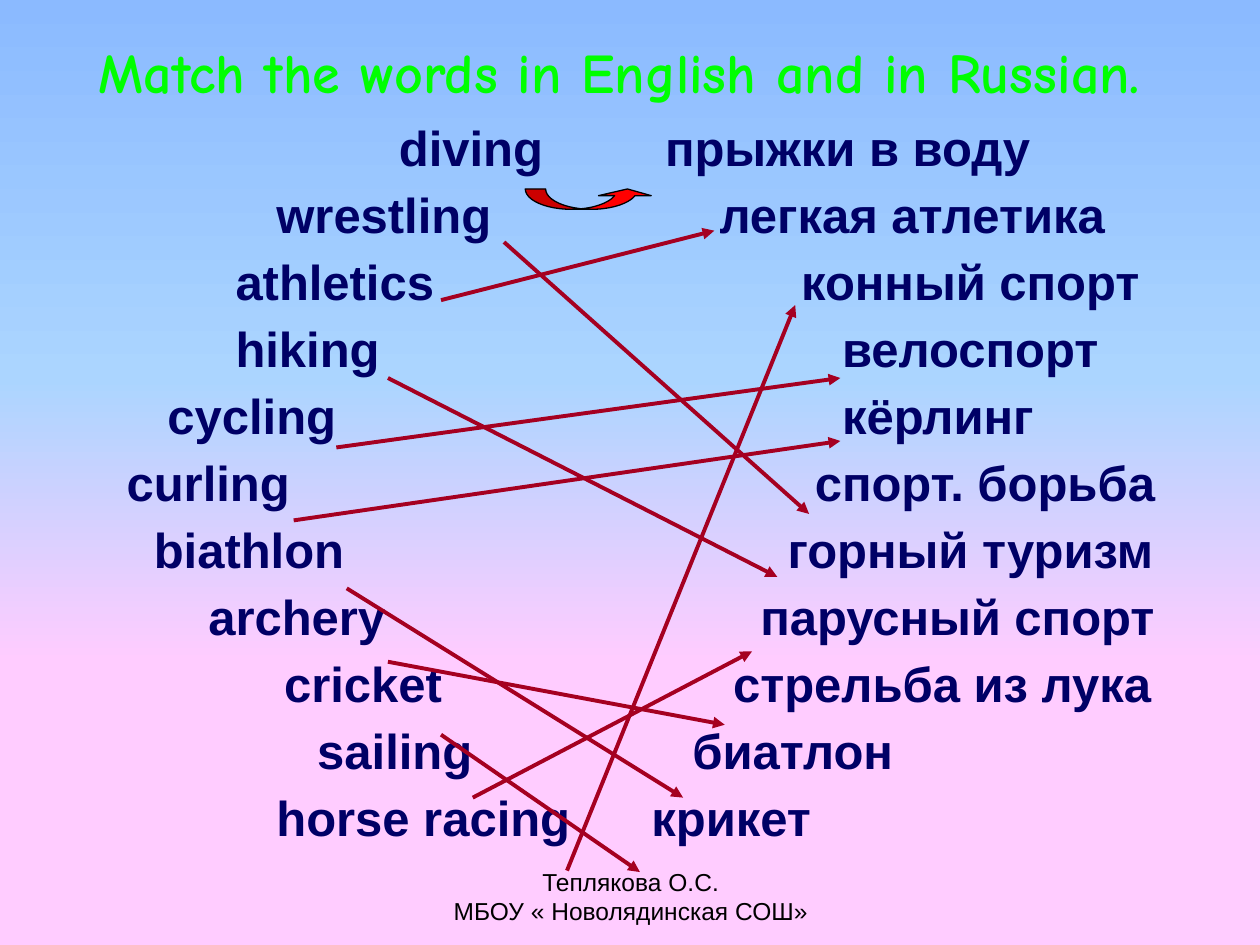
from lxml import etree
from pptx import Presentation
from pptx.dml.color import RGBColor
from pptx.enum import shapes, text
from pptx.oxml import parse_xml
from pptx.oxml.ns import nsdecls, qn
from pptx.util import Cm, Pt

GREEN = RGBColor(0x00, 0xFF, 0x00)
NAVY = RGBColor(0x00, 0x00, 0x66)
CRIMSON = RGBColor(0xA5, 0x00, 0x21)
RED = RGBColor(0xFF, 0x00, 0x00)
BLACK = RGBColor(0x00, 0x00, 0x00)
TITLE_OUTLINE = RGBColor(0x00, 0x20, 0x60)
SKY = [(0, "8BBAFF"), (40, "ABD5FF"), (70, "FFCCFF"), (100, "FFCCFF")]

# Content
TITLE = "Match the words in English and in Russian."
CREDITS = ["Теплякова О.С.", "МБОУ « Новолядинская СОШ»"]
# English word, its indent, Russian word, its indent (in indent steps)
WORDS = [
    ("diving", 23, "прыжки в воду", 4),
    ("wrestling", 14, "легкая атлетика", 8),
    ("athletics", 11, "конный спорт", 14),
    ("hiking", 11, "велоспорт", 17),
    ("cycling", 6, "кёрлинг", 17),
    ("curling", 3, "спорт. борьба", 15),
    ("biathlon", 5, "горный туризм", 13),
    ("archery", 9, "парусный спорт", 11),
    ("cricket", 4, "стрельба из лука", 9),
    ("sailing", 17, "биатлон", 6),
    ("horse racing", 14, "крикет", 3),
]
CENTRED = {"cricket"}
# Start and end of each matching arrow, in cm
MATCHES = [
    ((10.16, 4.88), (16.31, 10.36)),   # wrestling
    ((8.89, 6.05), (14.4, 4.65)),      # athletics
    ((6.78, 9.02), (16.94, 7.62)),     # cycling
    ((5.92, 10.49), (16.94, 8.89)),    # curling
    ((6.99, 11.86), (13.77, 16.08)),   # biathlon
    ((7.82, 13.34), (14.61, 14.61)),   # archery
    ((9.53, 16.08), (15.16, 13.13)),   # sailing
    ((11.43, 17.55), (16.03, 6.15)),   # horse racing
    ((7.82, 7.62), (15.67, 11.63)),    # hiking
    ((8.89, 14.81), (12.9, 17.58)),    # cricket
]

# Layout
INDENT_STEP = 0.27445  # width of one space at 28 pt
CELL_PADDING = 0.25
ROW_HEIGHT = Cm(1.35)
COLUMN_WIDTHS = [Cm(10.58), Cm(12.08)]
NO_STYLE_NO_GRID = "{2D5ABB26-0587-4C30-8999-92F81FD0307C}"

TITLE_FONT = {"name": "Comic Neue", "size": Pt(32), "bold": True}
WORD_FONT = {"name": "Arial", "size": Pt(28), "bold": True}
CREDIT_FONT = {"name": "Arial", "size": Pt(14), "bold": False}


def set_all(target, values):
    for name, value in values.items():
        setattr(target, name, value)


def write(paragraph, content, font, color, alignment):
    run = paragraph.add_run()
    run.text = content
    set_all(run.font, font)
    run.font.color.rgb = color
    paragraph.alignment = alignment
    return run


def paint_background(slide):
    fill = slide.background.fill
    fill.gradient()
    fill.gradient_angle = 270
    stops = slide.element.xpath(".//p:bg//a:gsLst")[0]
    for stop in list(stops):
        stops.remove(stop)
    for percent, color in SKY:
        stops.append(parse_xml(
            f'<a:gs {nsdecls("a")} pos="{percent * 1000}">'
            f'<a:srgbClr val="{color}"/></a:gs>'))


def add_title(slide):
    title = slide.shapes.title
    set_all(title, {"left": Cm(0.43), "top": Cm(0.64),
                    "width": Cm(24.13), "height": Cm(1.57)})
    set_all(title.text_frame, {"vertical_anchor": text.MSO_ANCHOR.MIDDLE,
                               "word_wrap": True,
                               "auto_size": text.MSO_AUTO_SIZE.NONE})
    run = write(title.text_frame.paragraphs[0], TITLE, TITLE_FONT, GREEN,
                text.PP_ALIGN.CENTER)
    run.font._element.insert(0, parse_xml(
        f'<a:ln {nsdecls("a")} w="{Pt(0.75)}"><a:solidFill>'
        f'<a:srgbClr val="{TITLE_OUTLINE}"/></a:solidFill></a:ln>'))


def fill_cell(cell, word, indent):
    cell.fill.background()
    set_all(cell, {"margin_left": Cm(CELL_PADDING + indent * INDENT_STEP),
                   "margin_right": Cm(CELL_PADDING),
                   "margin_top": Cm(0.13), "margin_bottom": Cm(0.06)})
    alignment = (text.PP_ALIGN.CENTER if word in CENTRED
                 else text.PP_ALIGN.LEFT)
    write(cell.text_frame.paragraphs[0], word, WORD_FONT, NAVY, alignment)


def add_word_table(slide):
    table = slide.shapes.add_table(
        len(WORDS), 2, Cm(1.48), Cm(2.34), sum(COLUMN_WIDTHS),
        ROW_HEIGHT * len(WORDS)).table
    set_all(table, {"first_row": False, "horz_banding": False})
    table._tbl.tblPr.find(qn("a:tableStyleId")).text = NO_STYLE_NO_GRID
    for column, width in zip(table.columns, COLUMN_WIDTHS):
        column.width = width
    for row, (english, left_indent, russian, right_indent) in zip(
            table.rows, WORDS):
        row.height = ROW_HEIGHT
        fill_cell(row.cells[0], english, left_indent)
        fill_cell(row.cells[1], russian, right_indent)


def add_example_arrow(slide):
    arrow = slide.shapes.add_shape(
        shapes.MSO_SHAPE.CURVED_UP_ARROW,
        Cm(10.59), Cm(3.81), Cm(2.59), Cm(0.41))
    for index, value in enumerate([1.3, 2.59, 0.33]):
        arrow.adjustments[index] = value
    arrow.shadow.inherit = False
    arrow.fill.solid()
    arrow.fill.fore_color.rgb = RED
    arrow.line.color.rgb = BLACK
    arrow.line.width = Pt(0.75)


def add_match(slide, start, end):
    connector = slide.shapes.add_connector(
        shapes.MSO_CONNECTOR.STRAIGHT, *map(Cm, start + end))
    connector.line.color.rgb = CRIMSON
    connector.line.width = Pt(2.25)
    etree.SubElement(connector.line._get_or_add_ln(), qn("a:tailEnd"),
                     type="triangle")
    etree.SubElement(connector._element.spPr, qn("a:effectLst"))


def add_credits(slide):
    frame = slide.shapes.add_textbox(
        Cm(8.69), Cm(17.35), Cm(8.05), Cm(1.32)).text_frame
    frame.word_wrap = True
    for index, line in enumerate(CREDITS):
        paragraph = frame.add_paragraph() if index else frame.paragraphs[0]
        write(paragraph, line, CREDIT_FONT, BLACK, text.PP_ALIGN.CENTER)


def main():
    presentation = Presentation()
    set_all(presentation, {"slide_width": Cm(25.4), "slide_height": Cm(19.05)})
    slide = presentation.slides.add_slide(presentation.slide_layouts[5])
    paint_background(slide)
    add_title(slide)
    add_word_table(slide)
    add_example_arrow(slide)
    for start, end in MATCHES:
        add_match(slide, start, end)
    add_credits(slide)
    presentation.save("out.pptx")


if __name__ == "__main__":
    main()
